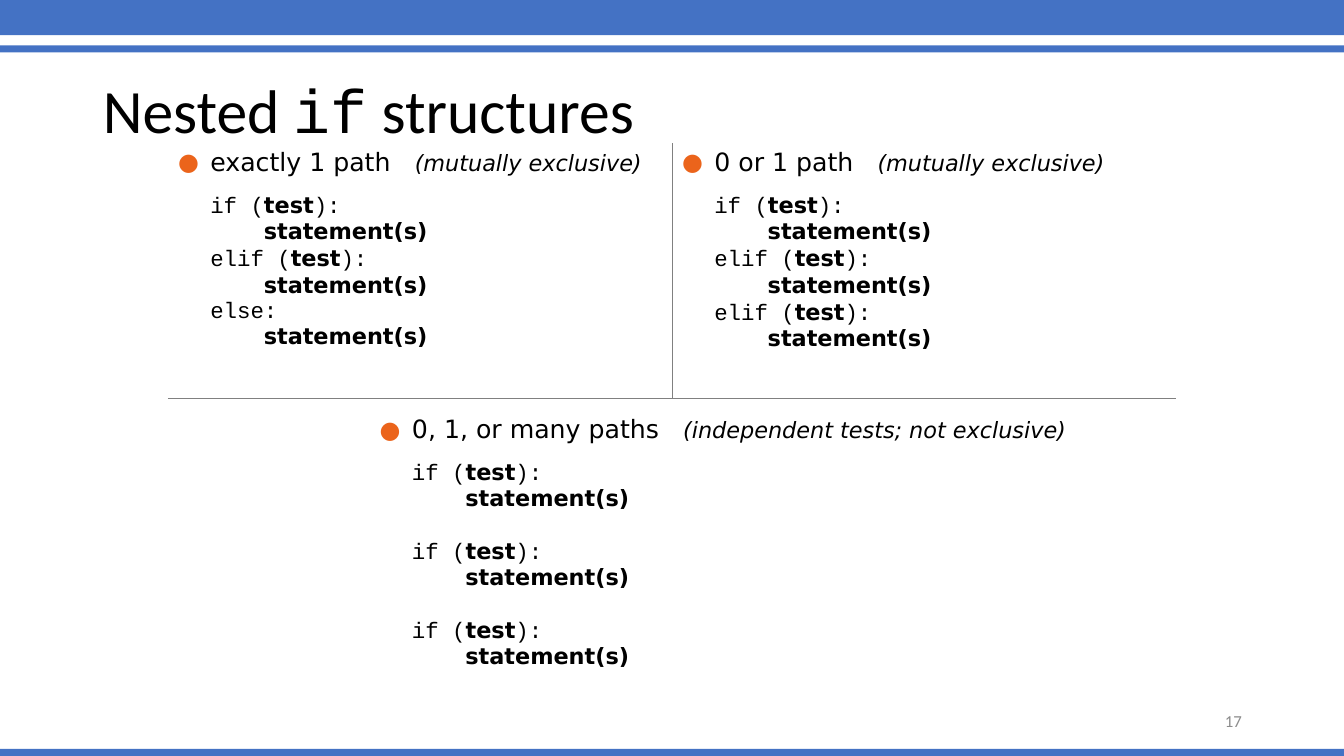
from dataclasses import dataclass

from lxml import etree
from pptx import Presentation
from pptx.dml.color import RGBColor
from pptx.enum.shapes import MSO_SHAPE
from pptx.enum.text import MSO_ANCHOR, MSO_AUTO_SIZE, PP_ALIGN
from pptx.oxml.ns import qn
from pptx.util import Emu, Inches, Pt

RECT = MSO_SHAPE.RECTANGLE
MIDDLE = MSO_ANCHOR.MIDDLE
NO_FIT = MSO_AUTO_SIZE.NONE
LEFT, RIGHT = PP_ALIGN.LEFT, PP_ALIGN.RIGHT

WIDTH, HEIGHT = Inches(13.33), Inches(7.5)
BLUE, ORANGE, GRAY, PALE, BLACK = "4472C4", "EB641B", "808080", "8C8C8C", "000000"
SANS, MONO, PLAIN = "DejaVu Sans", "Courier New", "Calibri"
HANG, STEP = 0.32, 0.53  # inches: bullet hang and code indent
LINE_GAP, CODE_GAP, GROUP_GAP = 3.8, 13.3, 22  # points


@dataclass
class Box:
    """A place on the slide, in percent of its width and height."""
    left: float
    top: float
    width: float
    height: float

    def spans(self) -> tuple:
        return (across(self.left), down(self.top),
                across(self.width), down(self.height))


@dataclass
class Panel:
    row: int
    col: int
    head: str
    note: str
    words: tuple
    edges: str
    indent: float = 0
    top: float = 0.05
    gap: float = LINE_GAP


BARS = [Box(0, 0, 100, 4.67), Box(0, 6, 100, 0.93), Box(0, 99.07, 100, 0.93)]
TITLE = Box(6.9, 5.33, 86.25, 19.33)
GRID = Box(12.5, 18.93, 75, 74.53)
NUMBER = Box(70.65, 92.67, 22.5, 5.33)
ROWS = (33.73, 40.8)

PANELS = [
    Panel(0, 0, "exactly 1 path", "(mutually exclusive)",
          ("if", "elif", "else"), "RB"),
    Panel(0, 1, "0 or 1 path", "(mutually exclusive)",
          ("if", "elif", "elif"), "LB"),
    Panel(1, 0, "0, 1, or many paths", "(independent tests; not exclusive)",
          ("if", "if", "if"), "T", indent=2, top=0.17, gap=GROUP_GAP),
]


def across(share: float) -> Emu:
    return Emu(round(WIDTH * share / 100))


def down(share: float) -> Emu:
    return Emu(round(HEIGHT * share / 100))


def color(code: str) -> RGBColor:
    return RGBColor.from_string(code)


def add_run(para, text: str, size: float, face: str = SANS, tint: str = BLACK,
            bold: bool = False, italic: bool = False):
    run = para.add_run()
    run.text = text
    font = run.font
    font.size, font.name = Pt(size), face
    font.bold, font.italic = bold, italic
    font.color.rgb = color(tint)
    return run


def add_node(parent, tag: str, **attrs: str):
    return etree.SubElement(parent, qn(tag), attrs)


def add_bullet(para, indent: float) -> None:
    props = para._p.get_or_add_pPr()
    props.set("marL", str(Inches(indent + HANG)))
    props.set("indent", str(-Inches(HANG)))
    add_node(add_node(props, "a:buClr"), "a:srgbClr", val=ORANGE)
    add_node(props, "a:buSzPct", val="95000")
    add_node(props, "a:buFont", typeface=SANS)
    add_node(props, "a:buChar", char="●")


def add_line(frame, indent: float, gap: float):
    """Start a line of code below the text so far."""
    para = frame.add_paragraph()
    para.line_spacing = 0.8
    para.space_before = Pt(gap)
    props = para._p.get_or_add_pPr()
    props.set("marL", str(Inches(indent)))
    props.set("indent", "0")
    return para


def set_edges(cell, edges: str) -> None:
    """Rule the named sides (L, R, T, B) in gray."""
    props = cell._tc.get_or_add_tcPr()
    for side in "LRTB":
        line = add_node(props, f"a:ln{side}", w=str(Pt(0.5)))
        if side in edges:
            fill = add_node(line, "a:solidFill")
            add_node(fill, "a:srgbClr", val=GRAY)
        else:
            add_node(line, "a:noFill")
    cell.fill.background()


def fill_panel(cell, panel: Panel) -> None:
    cell.margin_top = Inches(panel.top)
    frame = cell.text_frame
    head = frame.paragraphs[0]
    add_bullet(head, panel.indent)
    add_run(head, panel.head, 18)
    space = add_run(head, " ", 18)
    space._r.get_or_add_rPr().set("spc", "1140")
    add_run(head, panel.note, 16, italic=True)

    start = panel.indent + HANG
    for place, word in enumerate(panel.words):
        line = add_line(frame, start, panel.gap if place else CODE_GAP)
        if word == "else":
            add_run(line, "else:", 16, MONO)
        else:
            add_run(line, f"{word} (", 16, MONO)
            add_run(line, "test", 16, bold=True)
            add_run(line, "):", 16, MONO)
        body = add_line(frame, start + STEP, LINE_GAP)
        add_run(body, "statement(s)", 16, bold=True)


def add_bar(slide, box: Box) -> None:
    bar = slide.shapes.add_shape(RECT, *box.spans())
    bar.shadow.inherit = False
    bar.fill.solid()
    bar.fill.fore_color.rgb = color(BLUE)
    bar.line.fill.background()


def add_title(slide) -> None:
    title = slide.shapes.title
    title.left, title.top, title.width, title.height = TITLE.spans()
    frame = title.text_frame
    frame.auto_size, frame.vertical_anchor = NO_FIT, MIDDLE
    para = frame.paragraphs[0]
    para.alignment, para.line_spacing = LEFT, 0.9
    for text, face in (("Nested ", PLAIN), ("if", MONO), (" structures", PLAIN)):
        add_run(para, text, 44, face)


def add_grid(slide) -> None:
    table = slide.shapes.add_table(2, 2, *GRID.spans()).table
    table.first_row = table.horz_banding = False
    for row, share in zip(table.rows, ROWS):
        row.height = down(share)
    table.cell(1, 0).merge(table.cell(1, 1))
    for panel in PANELS:
        cell = table.cell(panel.row, panel.col)
        set_edges(cell, panel.edges)
        fill_panel(cell, panel)
    set_edges(table.cell(1, 1), "T")


def add_number(slide) -> None:
    frame = slide.shapes.add_textbox(*NUMBER.spans()).text_frame
    frame.word_wrap, frame.vertical_anchor = True, MIDDLE
    para = frame.paragraphs[0]
    para.alignment = RIGHT
    add_run(para, "17", 12, PLAIN, PALE)


def main() -> None:
    deck = Presentation()
    deck.slide_width, deck.slide_height = WIDTH, HEIGHT
    slide = deck.slides.add_slide(deck.slide_layouts[5])
    for box in BARS:
        add_bar(slide, box)
    add_title(slide)
    add_grid(slide)
    add_number(slide)
    deck.save("out.pptx")


if __name__ == "__main__":
    main()
